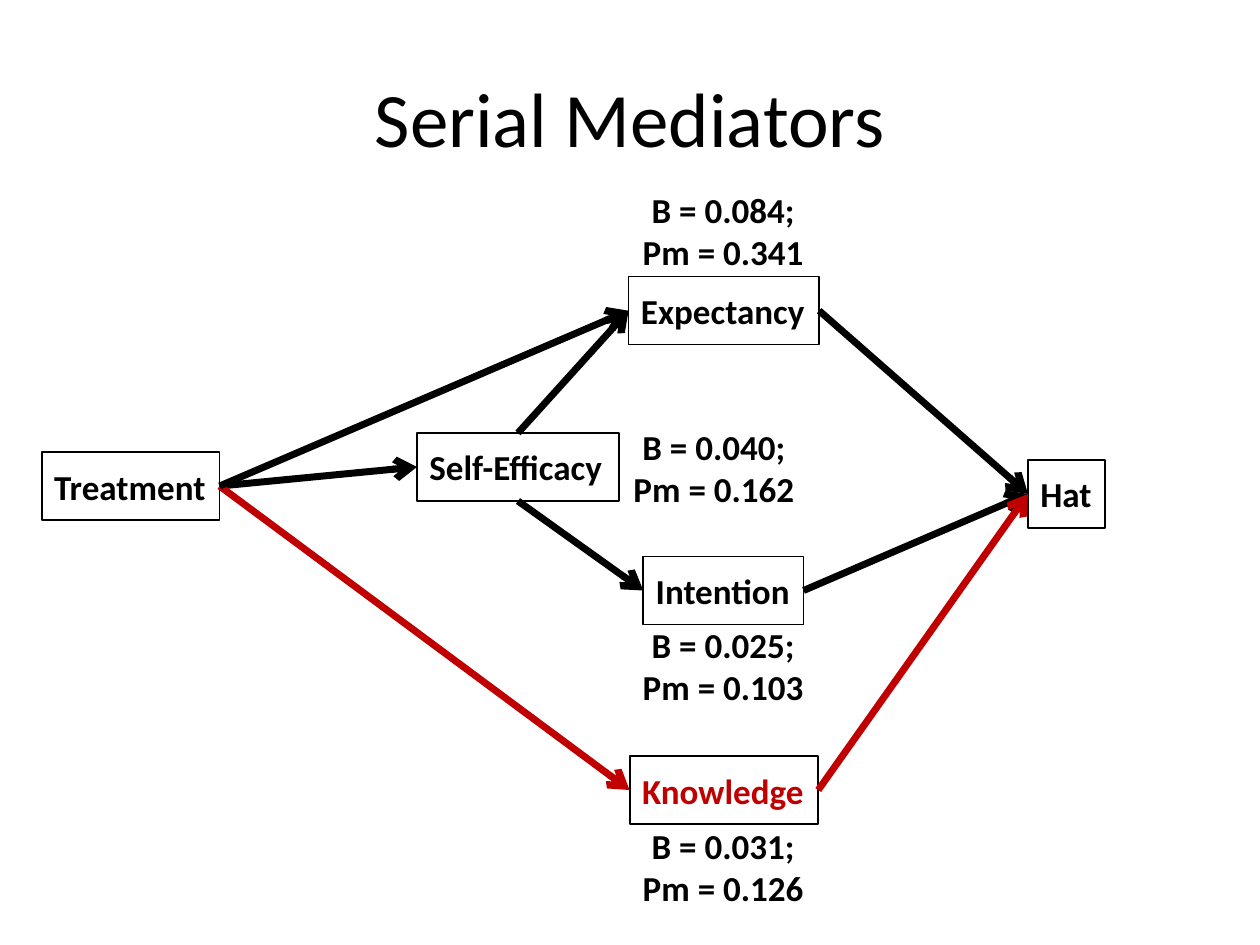
import pptx
import pptx.util
import pptx.dml.color
import pptx.enum.shapes
import pptx.enum.text
import pptx.oxml.ns
from lxml import etree

Pt = pptx.util.Pt
BLACK = pptx.dml.color.RGBColor(0x00, 0x00, 0x00)
RED = pptx.dml.color.RGBColor(0xC0, 0x00, 0x00)
FONT = "Calibri"
TOP, LEFT, BOTTOM, RIGHT = range(4)
ALIGN = pptx.enum.text.PP_ALIGN
GROW = pptx.enum.text.MSO_AUTO_SIZE.SHAPE_TO_FIT_TEXT

# Content: lengths in points
TITLE = "Serial Mediators"
NODE_HEIGHT = 38.9
NODES = {  # key: (label, left, top, width, text colour)
    "treatment": ("Treatment", 23.9, 258.3, 101.6, BLACK),
    "efficacy": ("Self-Efficacy ", 238.3, 247.4, 115.4, BLACK),
    "hat": ("Hat", 587.4, 262.8, 44, BLACK),
    "expectancy": ("Expectancy", 359.2, 158.1, 108.9, BLACK),
    "intention": ("Intention", 367.6, 318, 91.6, BLACK),
    "knowledge": ("Knowledge", 359.8, 432, 107.8, RED),
}
PATHS = [  # from node, side, to node, colour; all arrive on the left side
    ("treatment", RIGHT, "efficacy", BLACK),
    ("expectancy", RIGHT, "hat", BLACK),
    ("intention", RIGHT, "hat", BLACK),
    ("treatment", RIGHT, "knowledge", RED),
    ("knowledge", RIGHT, "hat", RED),
    ("efficacy", TOP, "expectancy", BLACK),
    ("efficacy", BOTTOM, "intention", BLACK),
    ("treatment", RIGHT, "expectancy", BLACK),
]
EFFECT_WIDTH, EFFECT_HEIGHT = 108, 54
EFFECTS = [  # lines, left, top
    (["B = 0.084;", "Pm = 0.341"], 359.3, 104.6),
    (["B = 0.040;", "Pm = 0.162"], 354, 240),
    (["B = 0.025;", "Pm = 0.103"], 359.3, 353),
    (["B = 0.031;", "Pm = 0.126"], 359.3, 468),
]


def write(shape, lines, size, color, align, bold=True, wrap=True):
    frame = shape.text_frame
    frame.word_wrap = wrap
    frame.vertical_anchor = pptx.enum.text.MSO_ANCHOR.MIDDLE
    frame.margin_left = frame.margin_right = Pt(7.2)
    frame.margin_top = frame.margin_bottom = Pt(7.2)
    paragraph = frame.paragraphs[0]
    paragraph.alignment = align
    for i, line in enumerate(lines):
        if i:
            paragraph.add_line_break()
        run = paragraph.add_run()
        run.text = line
        run.font.name = FONT
        run.font.size = Pt(size)
        run.font.bold = bold
        run.font.color.rgb = color


def add_node(slide, label, left, top, width, color):
    node = slide.shapes.add_shape(pptx.enum.shapes.MSO_SHAPE.RECTANGLE,
                                  Pt(left), Pt(top), Pt(width), Pt(NODE_HEIGHT))
    node.shadow.inherit = False
    node.fill.background()
    node.line.color.rgb = BLACK
    node.line.width = Pt(1)
    write(node, [label], 20, color, ALIGN.LEFT, wrap=False)
    node.text_frame.auto_size = GROW
    return node


def add_path(slide, source, side, target, color):
    arrow = slide.shapes.add_connector(
        pptx.enum.shapes.MSO_CONNECTOR.STRAIGHT, 0, 0, 0, 0)
    arrow.begin_connect(source, side)
    arrow.end_connect(target, LEFT)
    arrow.line.color.rgb = color
    arrow.line.width = Pt(4)
    qn = pptx.oxml.ns.qn
    etree.SubElement(arrow.line._get_or_add_ln(), qn("a:tailEnd"), type="arrow")
    etree.SubElement(arrow._element.spPr, qn("a:effectLst"))


def main():
    deck = pptx.Presentation()
    deck.slide_width, deck.slide_height = Pt(720), Pt(540)
    slide = deck.slides.add_slide(deck.slide_layouts[6])

    # Title
    title = slide.shapes.add_textbox(Pt(36), Pt(21.6), Pt(648), Pt(90))
    write(title, [TITLE], 44, BLACK, ALIGN.CENTER, bold=False)

    # Variables and the paths between them
    nodes = {key: add_node(slide, *node) for key, node in NODES.items()}
    for source, side, target, color in PATHS:
        add_path(slide, nodes[source], side, nodes[target], color)

    # Indirect effects beside each mediator
    for lines, left, top in EFFECTS:
        effect = slide.shapes.add_textbox(Pt(left), Pt(top),
                                          Pt(EFFECT_WIDTH), Pt(EFFECT_HEIGHT))
        write(effect, lines, 20, BLACK, ALIGN.CENTER)
        effect.text_frame.auto_size = GROW

    deck.save("out.pptx")


if __name__ == "__main__":
    main()
